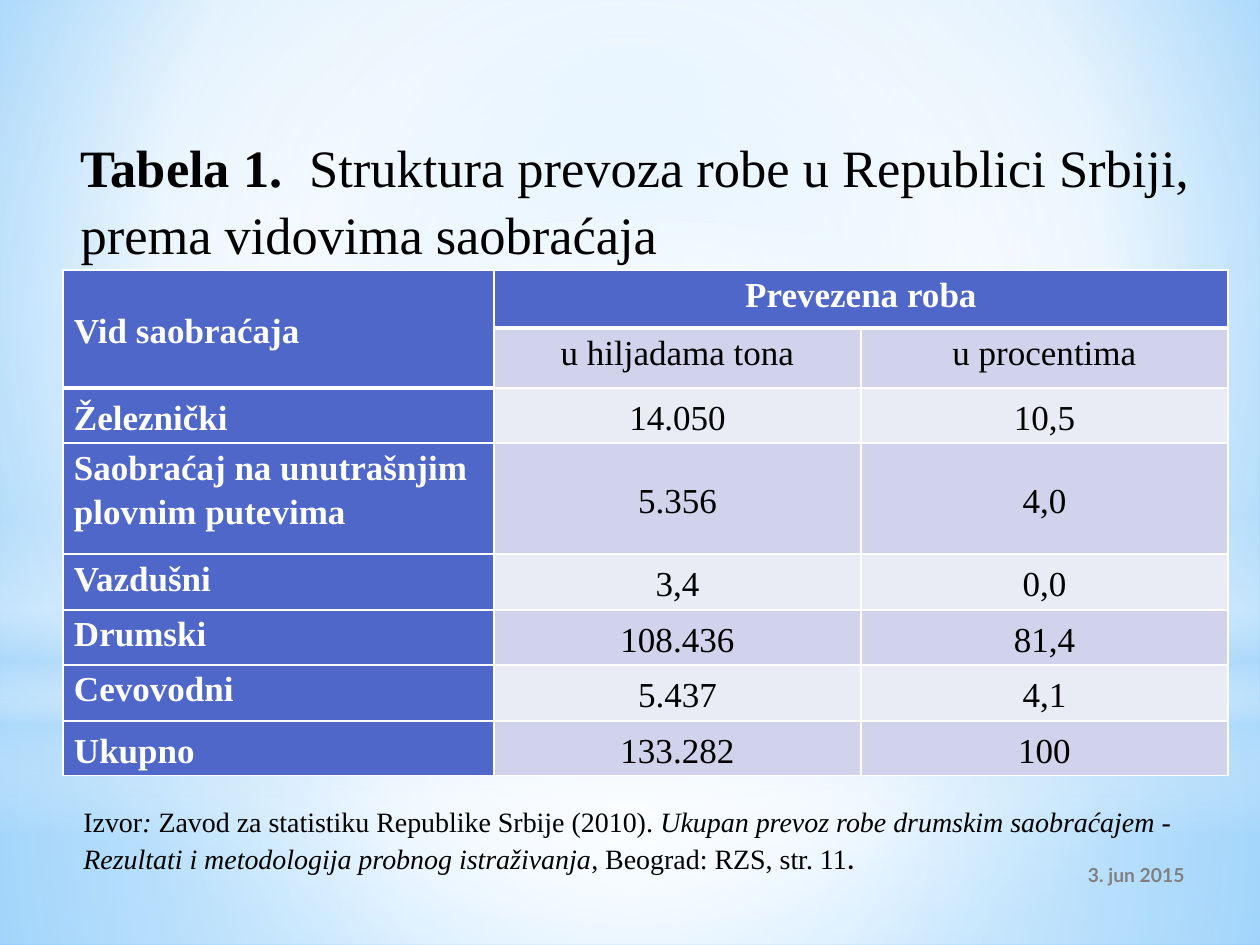
from lxml.etree import SubElement
from pptx import Presentation
from pptx.dml.color import RGBColor
from pptx.enum.shapes import MSO_SHAPE as Shape
from pptx.enum.text import MSO_ANCHOR as Anchor, PP_ALIGN as Align
from pptx.oxml import parse_xml
from pptx.oxml.ns import nsdecls, qn
from pptx.util import Pt

PX = 914400 / 126
SERIF, SANS = "Times New Roman", "Lato"
BLACK, WHITE, GREY = "000000", "FFFFFF", "808080"
SKY, ROYAL = "B4DCFA", "4E67C8"
BANDS = ["D0D3EB", "E9EBF5"]

HEADER = ["Vid saobraćaja", "Prevezena roba", ""]
UNITS = ["", "u hiljadama tona", "u procentima"]
TRANSPORT = [
    ["Železnički", "14.050", "10,5"],
    ["Saobraćaj na unutrašnjim plovnim putevima", "5.356", "4,0"],
    ["Vazdušni", "3,4", "0,0"],
    ["Drumski", "108.436", "81,4"],
    ["Cevovodni", "5.437", "4,1"],
    ["Ukupno", "133.282", "100"],
]
COLUMN_WIDTHS = [431, 367, 367]
ROW_HEIGHTS = [58, 60, 55, 111, 56, 55, 56, 55]
TOP_ANCHORED_LABELS = range(3, 7)


def px(length):
    return round(length * PX)


def rgb(color):
    return RGBColor.from_string(color)


def set_gradient(element, stops, focus=None):
    """Swap the first solid fill for (position, colour, opacity) stops.

    focus gives the left, top, right and bottom insets of a circular
    gradient in percent; without it the gradient runs downwards.
    """
    stop_xml = "".join(
        f'<a:gs pos="{position * 1000}"><a:srgbClr val="{color}">'
        f'<a:alpha val="{opacity * 1000}"/></a:srgbClr></a:gs>'
        for position, color, opacity in stops)
    if focus:
        left, top, right, bottom = (inset * 1000 for inset in focus)
        direction = (f'<a:path path="circle"><a:fillToRect l="{left}" t="{top}" '
                     f'r="{right}" b="{bottom}"/></a:path>')
    else:
        direction = '<a:lin ang="5400000" scaled="0"/>'
    gradient = parse_xml(f'<a:gradFill {nsdecls("a")} rotWithShape="1">'
                         f'<a:gsLst>{stop_xml}</a:gsLst>{direction}</a:gradFill>')
    solid = element.find(".//" + qn("a:solidFill"))
    solid.getparent().replace(solid, gradient)


def set_borders(cell, top, bottom):
    """Draw white cell borders; top and bottom are widths in points."""
    properties = cell._tc.get_or_add_tcPr()
    for side, width in zip("LRTB", (1, 1, top, bottom)):
        line = SubElement(properties, qn(f"a:ln{side}"), w=str(Pt(width)))
        fill = SubElement(line, qn("a:solidFill"))
        SubElement(fill, qn("a:srgbClr"), val=WHITE)


class SlideBuilder:
    def __init__(self, slide):
        self.slide = slide
        self.shapes = slide.shapes

    def style(self, run, size, color=BLACK, font=SERIF, bold=False, italic=False):
        run.font.size, run.font.name = Pt(size), font
        run.font.bold, run.font.italic = bold, italic
        run.font.color.rgb = rgb(color)

    def background(self, stops, focus):
        self.slide.background.fill.solid()
        set_gradient(self.slide.background.element, stops, focus)

    def glow(self, kind, left, top, width, height, stops, focus=None):
        shape = self.shapes.add_shape(kind, px(left), px(top), px(width), px(height))
        shape.shadow.inherit = False
        shape.fill.solid()
        set_gradient(shape._element, stops, focus)
        shape.line.fill.background()

    def fill_text(self, frame, pieces, align=Align.LEFT, anchor=Anchor.TOP):
        """Fill a frame with one paragraph of (text, style) pieces."""
        frame.word_wrap = True
        frame.vertical_anchor = anchor
        paragraph = frame.paragraphs[0]
        paragraph.alignment = align
        for text, look in pieces:
            run = paragraph.add_run()
            run.text = text
            self.style(run, **look)
        return paragraph

    def title(self, left, top, width, height, pieces):
        title = self.shapes.title
        title.left, title.top = px(left), px(top)
        title.width, title.height = px(width), px(height)
        self.shapes.element.append(title.element)  # in front of the glows
        self.fill_text(title.text_frame, pieces).line_spacing = 1.05

    def text(self, left, top, width, height, pieces, **layout):
        box = self.shapes.add_textbox(px(left), px(top), px(width), px(height))
        self.fill_text(box.text_frame, pieces, **layout)

    def cell(self, cell, text, row, column):
        is_header = row == 0 or column == 0
        thick_top = (row, column) in [(1, 1), (1, 2), (2, 0)]
        thick_bottom = row == 0 or (row, column) == (1, 0)
        set_borders(cell, 3 if thick_top else 1, 3 if thick_bottom else 1)
        cell.fill.solid()
        cell.fill.fore_color.rgb = rgb(ROYAL if is_header else BANDS[(row - 1) % 2])
        cell.margin_left = cell.margin_right = px(11)
        cell.margin_top = cell.margin_bottom = 0
        at_top = row in TOP_ANCHORED_LABELS if column == 0 else row < 2
        cell.vertical_anchor = Anchor.TOP if at_top else Anchor.MIDDLE
        paragraph = cell.text_frame.paragraphs[0]
        paragraph.text = text
        paragraph.alignment = Align.CENTER if column else Align.LEFT
        paragraph.line_spacing = 1.15
        paragraph.space_after = Pt(10 if row > 1 else 0)
        for run in paragraph.runs:
            self.style(run, 20, WHITE if is_header else BLACK, bold=is_header)

    def table(self, left, top, rows):
        table = self.shapes.add_table(
            len(rows), len(COLUMN_WIDTHS), px(left), px(top),
            px(sum(COLUMN_WIDTHS)), px(sum(ROW_HEIGHTS))).table
        for column, width in zip(table.columns, COLUMN_WIDTHS):
            column.width = px(width)
        for table_row, height in zip(table.rows, ROW_HEIGHTS):
            table_row.height = px(height)
        for row, texts in enumerate(rows):
            for column, text in enumerate(texts):
                self.cell(table.cell(row, column), text, row, column)
        table.cell(0, 0).merge(table.cell(1, 0))
        table.cell(0, 1).merge(table.cell(0, 2))


def main():
    deck = Presentation()
    deck.slide_width, deck.slide_height = px(1260), px(945)
    builder = SlideBuilder(deck.slides.add_slide(deck.slide_layouts[5]))

    center = (50, 50, 50, 50)
    builder.background([(0, "9ED5FF", 100), (60, WHITE, 100), (100, "5BB9FF", 100)],
                       (20, 10, 20, 60))
    builder.glow(Shape.RECTANGLE, 0, 703, 1260, 242,
                 [(0, WHITE, 91), (37, WHITE, 76), (100, SKY, 79)], center)
    builder.glow(Shape.RECTANGLE, 0, 0, 1260, 703,
                 [(0, WHITE, 89), (48, WHITE, 62), (100, SKY, 79)], center)
    builder.glow(Shape.RECTANGLE, 0, 519, 1260, 315,
                 [(0, WHITE, 0), (29, WHITE, 30), (45, SKY, 40),
                  (55, WHITE, 26), (65, SKY, 60), (100, WHITE, 0)])
    builder.glow(Shape.OVAL, 0, 220, 1260, 703,
                 [(0, WHITE, 100), (56, WHITE, 0)], center)

    builder.text(850, 850, 347, 50,
                 [("3. jun 2015", dict(size=11, color=GREY, font=SANS, bold=True))],
                 align=Align.RIGHT, anchor=Anchor.MIDDLE)
    builder.table(63, 270, [HEADER, UNITS, *TRANSPORT])
    builder.title(68, 126, 1155, 140, [
        ("Tabela 1.", dict(size=30, bold=True)),
        ("  Struktura prevoza robe u Republici Srbiji, prema vidovima saobraćaja",
         dict(size=30)),
    ])
    plain, italic = dict(size=16), dict(size=16, italic=True)
    builder.text(71, 798, 1165, 84, [
        ("Izvor", plain),
        (":", italic),
        (" Zavod za statistiku Republike Srbije (2010). ", plain),
        ("Ukupan prevoz robe drumskim saobraćajem - Rezultati i metodologija "
         "probnog istraživanja", italic),
        (", Beograd: RZS, str. 11", plain),
        (".", dict(size=18, font=SANS)),
    ])
    deck.save("out.pptx")


if __name__ == "__main__":
    main()
